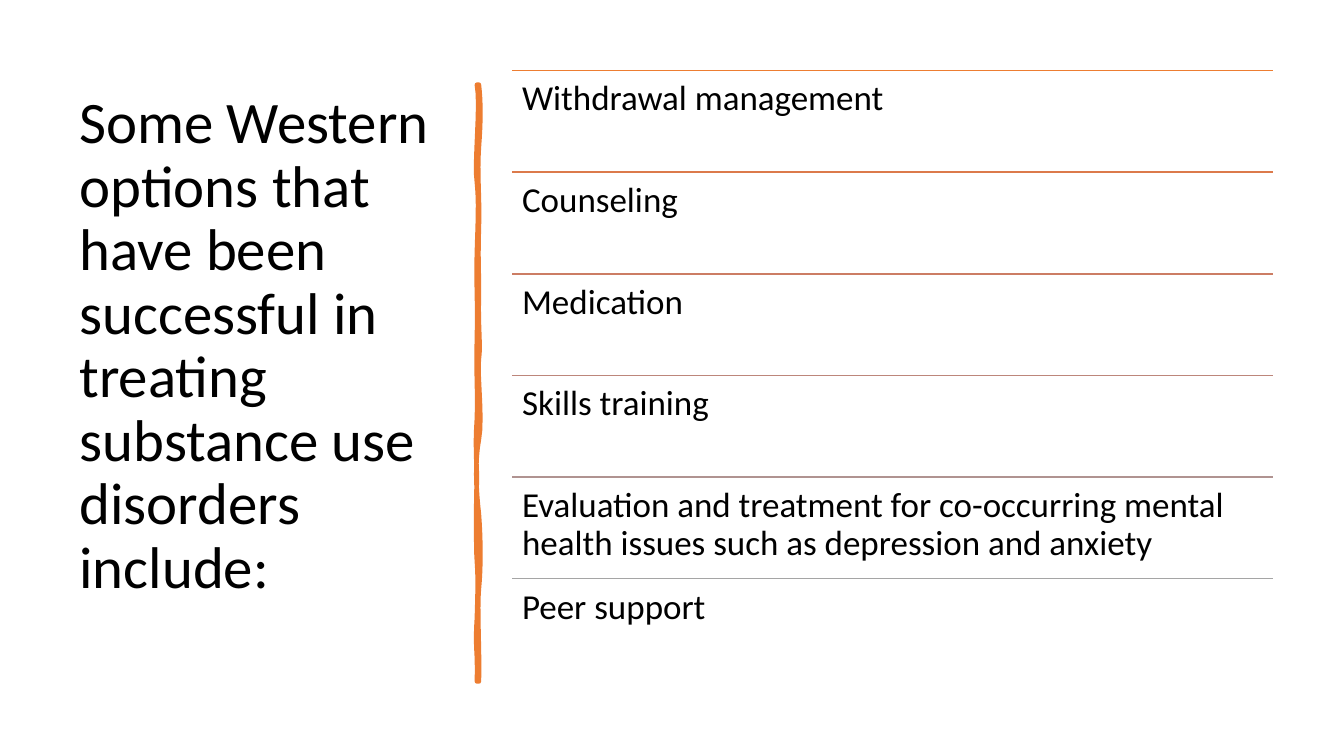
from typing import NamedTuple

from lxml import etree
from pptx import Presentation
from pptx import util as u
from pptx.dml.color import RGBColor
from pptx.enum import shapes, text
from pptx.oxml import ns

BLACK = RGBColor(0x00, 0x00, 0x00)
ORANGE = RGBColor(0xED, 0x7D, 0x31)
APRICOT = RGBColor(0xDC, 0x7A, 0x4B)
CLAY = RGBColor(0xCC, 0x7D, 0x64)
ROSE = RGBColor(0xBD, 0x86, 0x7B)
MAUVE = RGBColor(0xB0, 0x93, 0x91)
GRAY = RGBColor(0xA5, 0xA5, 0xA5)
FONT = "Calibri"

# Grid, in inches
SLIDE_W, SLIDE_H = 13.33, 7.5
TITLE_LEFT, TITLE_W, TITLE_H = 0.69, 3.74, 6.11
LIST_LEFT, LIST_W = 5.08, 7.55
TOP = 0.7
ROW_H = 6.05 / 6
TITLE_LIFT = 0.68  # bottom inset that raises the centred title


class Option(NamedTuple):
    label: str
    color: RGBColor


class Bend(NamedTuple):
    """One cubic segment of the divider's edge: two controls and the end y."""
    x1: float
    y1: float
    x2: float
    y2: float
    y: float


OPTIONS = [
    Option("Withdrawal management", ORANGE),
    Option("Counseling", APRICOT),
    Option("Medication", CLAY),
    Option("Skills training", ROSE),
    Option("Evaluation and treatment for co-occurring mental health issues "
           "such as depression and anxiety", MAUVE),
    Option("Peer support", GRAY),
]

# Hand-drawn divider: right edge runs down, left edge runs back up
DIVIDER_TOP, DIVIDER_BOTTOM = 0.84, 6.76
RIGHT_X, LEFT_X = 4.75, 4.73
RIGHT_EDGE = [
    Bend(4.77, 1.02, 4.77, 1.19, 1.46),
    Bend(4.73, 1.73, 4.76, 1.95, 2.26),
    Bend(4.74, 2.57, 4.75, 2.62, 2.94),
    Bend(4.74, 3.25, 4.77, 3.42, 3.56),
    Bend(4.73, 3.7, 4.79, 4.14, 4.36),
    Bend(4.71, 4.57, 4.72, 4.84, 5.1),
    Bend(4.77, 5.36, 4.77, 5.64, 5.84),
    Bend(4.73, 6.03, 4.76, 6.5, DIVIDER_BOTTOM),
]
LEFT_EDGE = [
    Bend(4.74, 6.46, 4.71, 6.44, 6.13),
    Bend(4.74, 5.83, 4.74, 5.7, 5.57),
    Bend(4.72, 5.44, 4.72, 4.95, 4.77),
    Bend(4.73, 4.59, 4.71, 4.45, 4.15),
    Bend(4.74, 3.86, 4.72, 3.73, 3.35),
    Bend(4.74, 2.98, 4.72, 2.81, 2.5),
    Bend(4.74, 2.18, 4.75, 2, 1.81),
    Bend(4.7, 1.63, 4.77, 1.04, DIVIDER_TOP),
]


def edge_points(x: float, y: float, bends: list[Bend],
                steps: int = 8) -> list[tuple[int, int]]:
    """Sample an edge whose segments all start and end at the same x."""
    points = [(u.Inches(x), u.Inches(y))]
    for b in bends:
        for i in range(1, steps + 1):
            t = i / steps
            s = 1 - t
            weights = (s ** 3, 3 * s * s * t, 3 * s * t * t, t ** 3)
            px = sum(w * v for w, v in zip(weights, (x, b.x1, b.x2, x)))
            py = sum(w * v for w, v in zip(weights, (y, b.y1, b.y2, b.y)))
            points.append((u.Inches(px), u.Inches(py)))
        y = b.y
    return points


def add_divider(slide) -> None:
    points = (edge_points(RIGHT_X, DIVIDER_TOP, RIGHT_EDGE)
              + edge_points(LEFT_X, DIVIDER_BOTTOM, LEFT_EDGE))
    builder = slide.shapes.build_freeform(*points[0], scale=1.0)
    builder.add_line_segments(points[1:], close=True)
    sp = builder.convert_to_shape()
    sp.shadow.inherit = False
    sp.fill.solid()
    sp.fill.fore_color.rgb = ORANGE
    sp.line.color.rgb = ORANGE
    sp.line.width = u.Pt(3.25)


def add_text(slide, left: float, top: float, width: float, height: float,
             words: str, size: float):
    sp = slide.shapes.add_textbox(*map(u.Inches, (left, top, width, height)))
    tf = sp.text_frame
    tf.word_wrap = True
    p = tf.paragraphs[0]
    p.text = words
    p.line_spacing = 0.9
    p.font.name = FONT
    p.font.size = u.Pt(size)
    p.font.color.rgb = BLACK
    return tf


def add_option(slide, row: int, option: Option) -> None:
    top = TOP + row * ROW_H
    rule = slide.shapes.add_connector(
        shapes.MSO_CONNECTOR.STRAIGHT,
        *map(u.Inches, (LIST_LEFT, top, LIST_LEFT + LIST_W, top)))
    rule.line.color.rgb = option.color
    rule.line.width = u.Pt(1)
    etree.SubElement(rule._element.spPr, ns.qn("a:effectLst"))
    tf = add_text(slide, LIST_LEFT, top, LIST_W, ROW_H, option.label, 25)
    tf.margin_top = tf.margin_bottom = u.Inches(0.1)


def main() -> None:
    prs = Presentation()
    prs.slide_width = u.Inches(SLIDE_W)
    prs.slide_height = u.Inches(SLIDE_H)
    slide = prs.slides.add_slide(prs.slide_layouts[6])

    # Title column
    tf = add_text(slide, TITLE_LEFT, TOP, TITLE_W, TITLE_H,
                  "Some Western options that have been successful in "
                  "treating substance use disorders include:", 42)
    tf.vertical_anchor = text.MSO_ANCHOR.MIDDLE
    tf.margin_bottom = u.Inches(TITLE_LIFT)

    # Divider and list of options
    add_divider(slide)
    for row, option in enumerate(OPTIONS):
        add_option(slide, row, option)

    prs.save("out.pptx")


if __name__ == "__main__":
    main()
